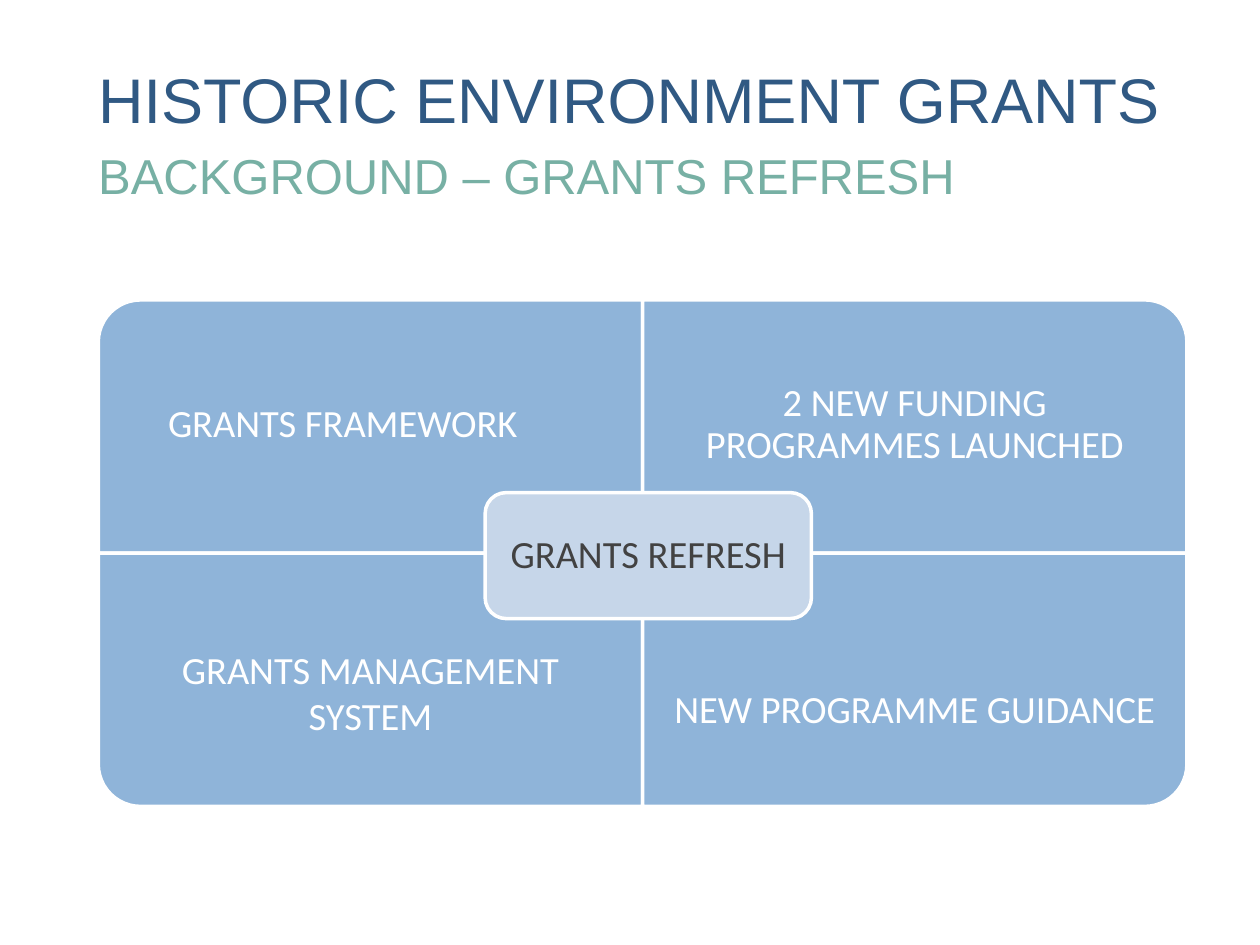
from dataclasses import dataclass

from pptx import Presentation
from pptx.dml.color import RGBColor
from pptx.enum.shapes import MSO_SHAPE
from pptx.enum.text import MSO_ANCHOR, PP_ALIGN
from pptx.util import Inches, Pt


@dataclass(frozen=True)
class Theme:
    """Colours, fonts and sizes of the slide."""
    navy: str = "305983"
    green: str = "77B0A4"
    blue: str = "8FB4D9"
    pale: str = "C6D6E9"
    white: str = "FFFFFF"
    dark: str = "424242"
    head: str = "Arial"
    body: str = "Calibri"
    title: int = 36
    sub: int = 28
    label: int = 22
    line: int = 2


THEME = Theme()


def add_text(slide, box, text, font, size, color, pad=0, right=None, mid=True, space=0.9):
    """Write one paragraph in a box, centred or at the top left."""
    frame = slide.shapes.add_textbox(*map(Inches, box)).text_frame
    frame.word_wrap = True
    frame.margin_left = frame.margin_top = frame.margin_bottom = Inches(pad)
    frame.margin_right = Inches(pad if right is None else right)
    frame.vertical_anchor = MSO_ANCHOR.MIDDLE if mid else MSO_ANCHOR.TOP
    frame.text = text
    para = frame.paragraphs[0]
    para.alignment = PP_ALIGN.CENTER if mid else PP_ALIGN.LEFT
    para.line_spacing = space
    para.font.name = font
    para.font.size = Pt(size)
    para.font.color.rgb = RGBColor.from_string(color)


def add_panel(slide, kind, box, fill, turn=0):
    """Draw a filled panel that covers the box after its turn."""
    left, top, width, height = box
    if turn % 180:
        left, top = left + (width - height) / 2, top + (height - width) / 2
        width, height = height, width
    shape = slide.shapes.add_shape(kind, *map(Inches, (left, top, width, height)))
    shape.rotation = turn
    shape.shadow.inherit = False
    shape.fill.solid()
    shape.fill.fore_color.rgb = RGBColor.from_string(fill)
    shape.line.color.rgb = RGBColor.from_string(THEME.white)
    shape.line.width = Pt(THEME.line)


def add_header(slide, box):
    """Place the title with the subtitle below it."""
    left, top, width, height = box
    add_text(slide, (left, top, width, height), "HISTORIC ENVIRONMENT GRANTS",
             THEME.head, THEME.title, THEME.navy, mid=False)
    add_text(slide, (left, top + height, width, 0.43), "BACKGROUND – GRANTS REFRESH",
             THEME.head, THEME.sub, THEME.green, mid=False)


def add_matrix(slide, box):
    """Place four quarter panels around a central label."""
    left, top, width, height = box
    wide, high = width / 2, height / 2
    quarters = [
        (0, 0, 270, "GRANTS FRAMEWORK", 0.24, 0.61, 0.9),
        (1, 0, 0, "2 NEW FUNDING PROGRAMMES LAUNCHED", 0.24, 0.17, 0.9),
        (0, 1, 180, "GRANTS MANAGEMENT SYSTEM", 0.35, 0.17, 1.0),
        (1, 1, 90, "NEW PROGRAMME GUIDANCE", 0.5, 0.17, 0.9),
    ]
    for col, row, turn, text, drop, right, space in quarters:
        x, y = left + col * wide, top + row * high
        add_panel(slide, MSO_SHAPE.ROUND_1_RECTANGLE, (x, y, wide, high), THEME.blue, turn)
        add_text(slide, (x, y + drop, wide, 1.51), text, THEME.body, THEME.label,
                 THEME.white, 0.17, right, space=space)
    hub = (left + 3.07, top + 1.53, 2.59, 1)
    add_panel(slide, MSO_SHAPE.ROUNDED_RECTANGLE, hub, THEME.pale)
    add_text(slide, hub, "GRANTS REFRESH", THEME.body, THEME.label, THEME.dark, 0.14)


def main():
    """Build and save the slide."""
    deck = Presentation()
    deck.slide_width, deck.slide_height = Inches(10), Inches(7.5)
    slide = deck.slides.add_slide(deck.slide_layouts[6])
    add_header(slide, (0.78, 0.55, 8.73, 0.66))
    add_matrix(slide, (0.78, 2.38, 8.64, 4.02))
    deck.save("out.pptx")


if __name__ == "__main__":
    main()
